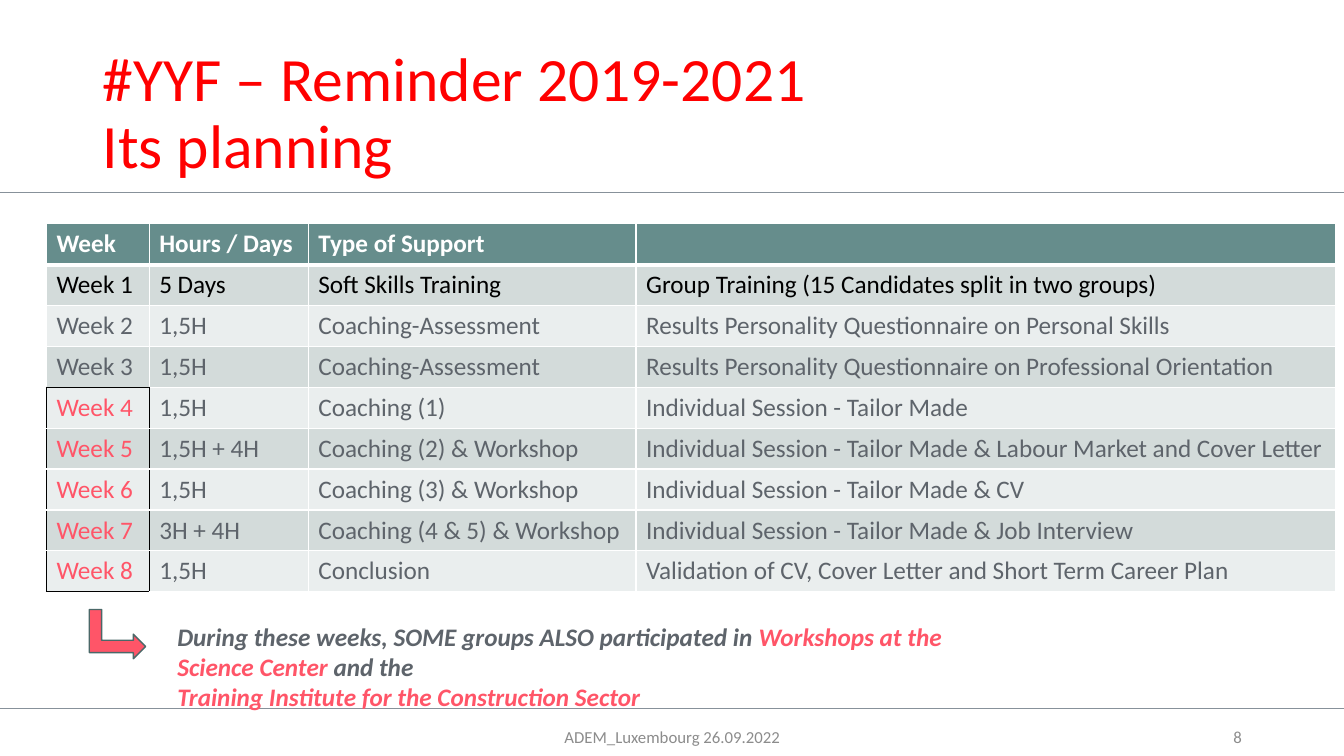
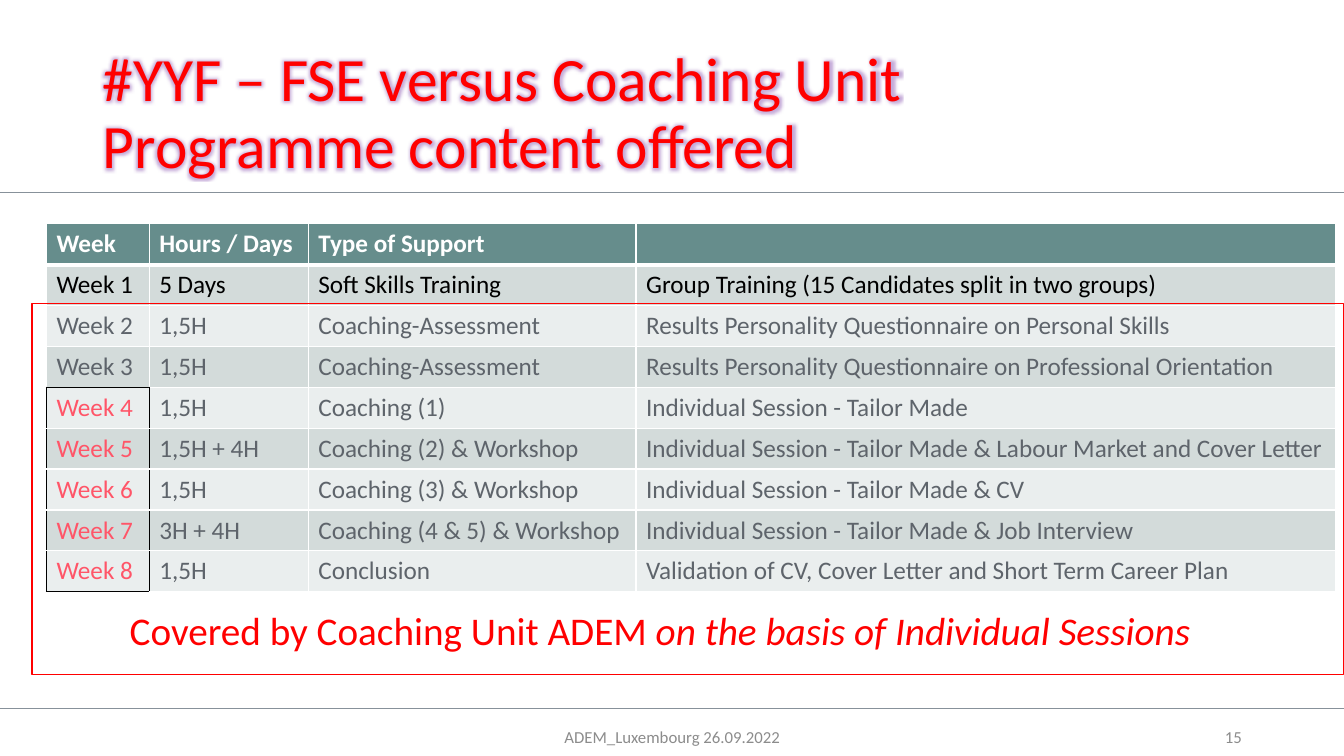
from lxml import etree
from pptx import Presentation
from pptx.dml.color import RGBColor
from pptx.enum import shapes, text
from pptx.oxml import ns
from pptx.util import Cm, Pt

RED = RGBColor(0xFF, 0x00, 0x00)
CORAL = RGBColor(0xFF, 0x55, 0x68)
GREY = RGBColor(0x5E, 0x64, 0x6B)
FOOTER_GREY = RGBColor(0x8C, 0x8C, 0x8C)
RULE_GREY = RGBColor(0x87, 0x91, 0x9A)
TEAL = RGBColor(0x66, 0x8D, 0x8C)
DARK_TEAL = RGBColor(0x4B, 0x68, 0x68)
BAND_DARK = RGBColor(0xD3, 0xDB, 0xDA)
BAND_LIGHT = RGBColor(0xEA, 0xEE, 0xEE)
PURPLE = RGBColor(0x70, 0x30, 0xA0)
BLACK = RGBColor(0, 0, 0)
WHITE = RGBColor(0xFF, 0xFF, 0xFF)

FONT = "Calibri"
SLIDE_WIDTH, SLIDE_HEIGHT = 33.87, 19.05
COLUMN_WIDTHS = (2.59, 4.01, 8.26, 17.63)
ROW_HEIGHT = 1.03
BOXED_FIRST, BOXED_LAST = 4, 8  # weeks framed in black

PLANNING = (
    ("Week", "Hours / Days", "Type of Support", ""),
    ("Week 1", "5 Days", "Soft Skills Training",
     "Group Training (15 Candidates split in two groups)"),
    ("Week 2", "1,5H", "Coaching-Assessment",
     "Results Personality Questionnaire on Personal Skills"),
    ("Week 3", "1,5H", "Coaching-Assessment",
     "Results Personality Questionnaire on Professional Orientation"),
    ("Week 4", "1,5H", "Coaching (1)", "Individual Session - Tailor Made"),
    ("Week 5", "1,5H + 4H", "Coaching (2) & Workshop",
     "Individual Session - Tailor Made & Labour Market and Cover Letter"),
    ("Week 6", "1,5H", "Coaching (3) & Workshop",
     "Individual Session - Tailor Made & CV"),
    ("Week 7", "3H + 4H", "Coaching (4 & 5) & Workshop",
     "Individual Session - Tailor Made & Job Interview"),
    ("Week 8", "1,5H", "Conclusion",
     "Validation of CV, Cover Letter and Short Term Career Plan"),
)


def add_run(paragraph, words, size, color, bold=False, italic=False):
    run = paragraph.add_run()
    run.text = words
    font = run.font
    font.name, font.size, font.bold, font.italic = FONT, Pt(size), bold, italic
    font.color.rgb = color
    return run


def add_text_box(slide, left, top, width, height, anchor=text.MSO_ANCHOR.TOP):
    frame = slide.shapes.add_textbox(
        Cm(left), Cm(top), Cm(width), Cm(height)).text_frame
    frame.word_wrap = True
    frame.vertical_anchor = anchor
    return frame


def add_glow(run):
    """Give the letters a purple halo with a soft shadow."""
    effects = etree.Element(ns.qn("a:effectLst"))
    glow = etree.SubElement(effects, ns.qn("a:glow"), rad="63500")
    shadow = etree.SubElement(effects, ns.qn("a:outerShdw"), blurRad="50800",
                              dist="38100", dir="2700000", algn="tl")
    for effect, color in ((glow, PURPLE), (shadow, BLACK)):
        tint = etree.SubElement(effect, ns.qn("a:srgbClr"), val=str(color))
        etree.SubElement(tint, ns.qn("a:alpha"), val="40000")
    run.font.fill  # the halo follows the fill in the run properties
    run._r.rPr.find(ns.qn("a:solidFill")).addnext(effects)


def add_title(slide, lines, glowing):
    frame = add_text_box(slide, 2.34, 1.02, 27.36, 3.68,
                         text.MSO_ANCHOR.BOTTOM)
    paragraph = frame.paragraphs[0]
    paragraph.line_spacing = 0.9
    for index, line in enumerate(lines):
        if index:
            paragraph.add_line_break()
        run = add_run(paragraph, line, 44, RED)
        if glowing:
            add_glow(run)


def add_rule(slide, top):
    rule = slide.shapes.add_connector(
        shapes.MSO_CONNECTOR.STRAIGHT, 0, Cm(top), Cm(SLIDE_WIDTH), Cm(top))
    rule.line.color.rgb = RULE_GREY
    rule.line.width = Pt(0.5)
    etree.SubElement(rule._element.spPr, ns.qn("a:effectLst"))


def add_footer_text(slide, left, width, words, alignment):
    frame = add_text_box(slide, left, 18.06, width, 1.02,
                         text.MSO_ANCHOR.MIDDLE)
    frame.paragraphs[0].alignment = alignment
    add_run(frame.paragraphs[0], words, 12, FOOTER_GREY)


def add_frame(prs, title_lines, number, glowing=False):
    """Start a slide with its title, rules and footer."""
    slide = prs.slides.add_slide(prs.slide_layouts[6])
    for top in (4.85, 17.86):
        add_rule(slide, top)
    add_title(slide, title_lines, glowing)
    add_footer_text(slide, 11.23, 11.43, "ADEM_Luxembourg 26.09.2022",
                    text.PP_ALIGN.CENTER)
    add_footer_text(slide, 23.93, 7.62, number, text.PP_ALIGN.RIGHT)
    return slide


def is_boxed(row):
    return BOXED_FIRST <= row <= BOXED_LAST


def black_sides(row, column):
    """Name the sides of a cell that lie on the frame of the boxed weeks."""
    if column == 1:
        return "L" if is_boxed(row) else ""
    if column > 1:
        return ""
    sides = "LR" if is_boxed(row) else ""
    if row == BOXED_FIRST:
        sides += "T"
    if row in (BOXED_FIRST - 1, BOXED_LAST):
        sides += "B"
    return sides


def set_borders(cell, row, column):
    black = black_sides(row, column)
    properties = cell._tc.get_or_add_tcPr()
    for position, side in enumerate("LRTB"):
        heavy = (row, side) in ((0, "B"), (1, "T"))
        border = etree.Element(ns.qn(f"a:ln{side}"),
                               w=str(Pt(3 if heavy else 1)))
        fill = etree.SubElement(border, ns.qn("a:solidFill"))
        etree.SubElement(fill, ns.qn("a:srgbClr"),
                         val=str(BLACK if side in black else WHITE))
        properties.insert(position, border)


def cell_colors(row, column):
    """Return the fill and the text colour of a cell."""
    if row == 0:
        return TEAL, WHITE
    fill = BAND_DARK if row % 2 else BAND_LIGHT
    if row == 1:
        return fill, BLACK
    return fill, CORAL if column == 0 and is_boxed(row) else GREY


def add_planning(slide):
    table = slide.shapes.add_table(
        len(PLANNING), len(COLUMN_WIDTHS), Cm(1.17), Cm(5.64),
        Cm(sum(COLUMN_WIDTHS)), Cm(ROW_HEIGHT * len(PLANNING))).table
    for column, width in zip(table.columns, COLUMN_WIDTHS):
        column.width = Cm(width)
    for row, entries in enumerate(PLANNING):
        table.rows[row].height = Cm(ROW_HEIGHT)
        for column, words in enumerate(entries):
            cell = table.cell(row, column)
            fill, color = cell_colors(row, column)
            cell.fill.solid()
            cell.fill.fore_color.rgb = fill
            set_borders(cell, row, column)
            if words:
                add_run(cell.text_frame.paragraphs[0], words, 18, color,
                        bold=row == 0)


def add_outlined(slide, preset, left, top, width, height, line, fill=None):
    shape = slide.shapes.add_shape(
        preset, Cm(left), Cm(top), Cm(width), Cm(height))
    shape.shadow.inherit = False
    shape.line.color.rgb = line
    shape.line.width = Pt(1)
    if fill is None:
        shape.fill.background()
    else:
        shape.fill.solid()
        shape.fill.fore_color.rgb = fill
    return shape


def add_workshop_note(slide):
    arrow = add_outlined(slide, shapes.MSO_SHAPE.BENT_UP_ARROW,
                         2.34, 15.27, 1.24, 1.42, DARK_TEAL, CORAL)
    arrow.rotation = 90
    frame = add_text_box(slide, 4.22, 15.52, 28.45, 2.57)
    note = (
        (("During these weeks, SOME groups ALSO participated in ", GREY),
         ("Workshops at the", CORAL)),
        (("Science Center ", CORAL), ("and the", GREY)),
        (("Training Institute for the Construction Sector", CORAL),),
    )
    for index, pieces in enumerate(note):
        paragraph = frame.add_paragraph() if index else frame.paragraphs[0]
        for words, color in pieces:
            add_run(paragraph, words, 18, color, bold=True, italic=True)


def add_coverage(slide):
    """Frame the weeks covered by the coaching unit and say so below."""
    add_outlined(slide, shapes.MSO_SHAPE.RECTANGLE,
                 0.81, 7.65, 33.05, 9.35, RED)
    statement = add_text_box(slide, 3.02, 15.16, 30.23, 1.45).paragraphs[0]
    add_run(statement, "Covered by Coaching Unit ADEM ", 28, RED)
    add_run(statement, "on the basis of Individual Sessions", 28, RED,
            italic=True)


def main():
    prs = Presentation()
    prs.slide_width, prs.slide_height = Cm(SLIDE_WIDTH), Cm(SLIDE_HEIGHT)

    reminder = add_frame(
        prs, ("#YYF – Reminder 2019-2021", "Its planning"), "8")
    add_planning(reminder)
    add_workshop_note(reminder)

    comparison = add_frame(
        prs, ("#YYF – FSE versus Coaching Unit", "Programme content offered"),
        "15", glowing=True)
    add_planning(comparison)
    add_coverage(comparison)

    prs.save("out.pptx")


if __name__ == "__main__":
    main()
